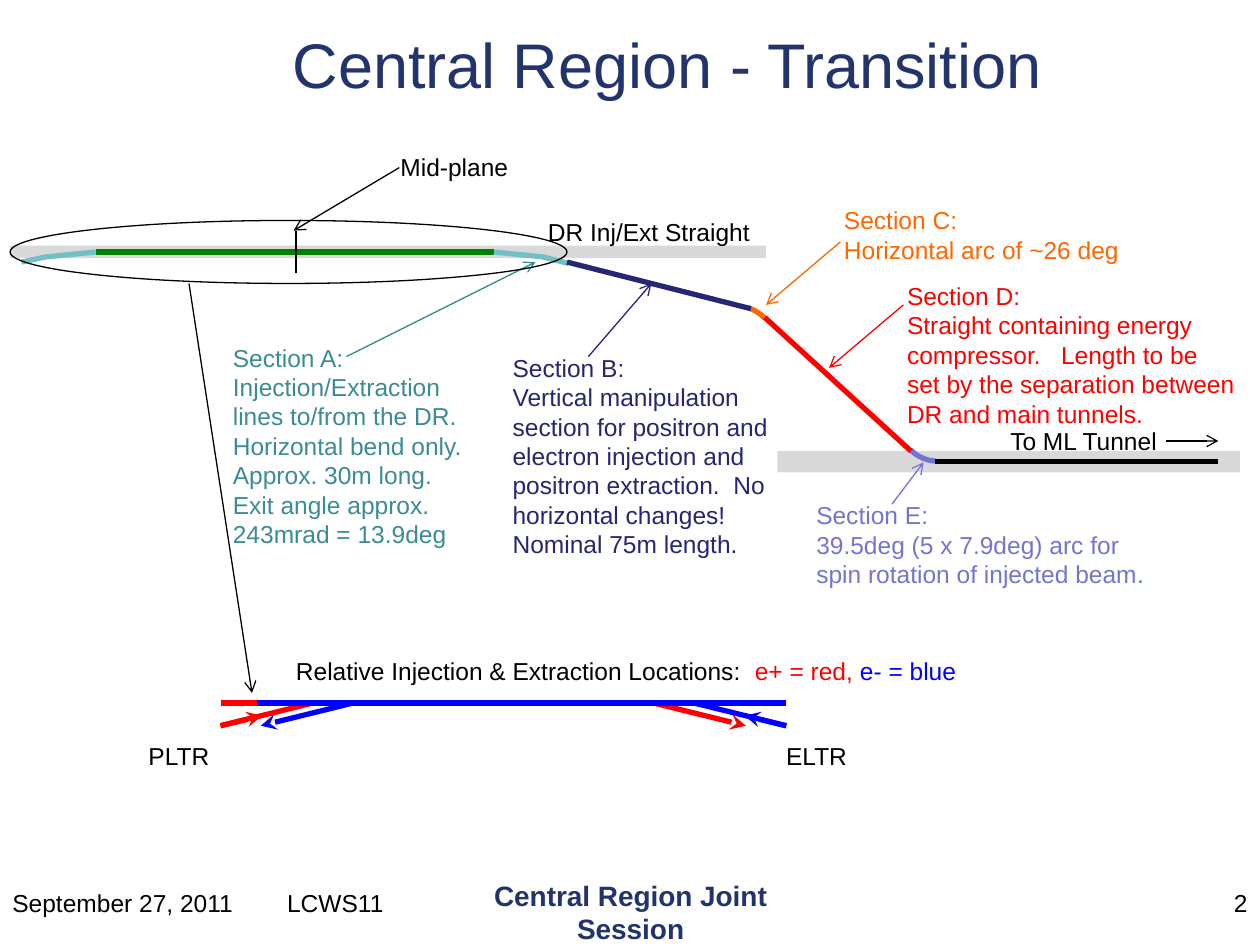
"""Build the Central Region transition slide."""
from dataclasses import dataclass

import pptx
import pptx.dml.color
import pptx.enum.shapes
import pptx.enum.text
import pptx.oxml
import pptx.oxml.ns
import pptx.util

PX = 9144
FONT = "Arial"
BLACK, GREY, NAVY = "000000", "D9D9D9", "23346C"
GREEN, AQUA, TEAL = "008000", "72BFC5", "3C8C93"
INDIGO, ORANGE, RED, LILAC, BLUE = "262673", "FF6600", "FF0000", "7575D1", "0000FF"
THIN, THICK = 0.75, 3
SHAPE = pptx.enum.shapes.MSO_SHAPE
ALIGN = pptx.enum.text.PP_ALIGN
ANCHOR = pptx.enum.text.MSO_ANCHOR


@dataclass(frozen=True)
class Line:
    start: tuple[int, int]
    end: tuple[int, int]
    color: str = BLACK
    width: float = THIN
    head: str = ""


@dataclass(frozen=True)
class Label:
    box: tuple[int, int, int, int]
    color: str
    lines: tuple[str, ...]


@dataclass(frozen=True)
class Arc:
    box: tuple[int, int, int, int]
    rotation: float
    start: float
    color: str


TUNNELS = [(617, 358, 367, 17), (8, 195, 600, 10)]
BEAMLINE = [
    Line((76, 200), (392, 200), GREEN, THICK),
    Line((392, 200), (432, 204), AQUA, THICK),
    Line((431, 204), (451, 209), AQUA, THICK),
    Line((76, 200), (36, 204), AQUA, THICK),
    Line((36, 204), (17, 208), AQUA, THICK),
    Line((235, 183), (235, 217)),
    Line((607, 252), (723, 358), RED, THICK),
    Line((450, 208), (596, 245), INDIGO, THICK),
    Line((742, 366), (967, 366), BLACK, THICK),
]
ARCS = [
    Arc((555, 243, 60, 60), 317, 197.84, ORANGE),
    Arc((714, 306, 60, 60), 135.7, 190.5, LILAC),
]
POINTERS = [
    Line((317, 133), (233, 183), head="arrow"),
    Line((275, 283), (425, 208), TEAL, head="arrow"),
    Line((467, 283), (517, 225), INDIGO, head="arrow"),
    Line((667, 192), (608, 242), ORANGE, head="arrow"),
    Line((717, 242), (658, 292), RED, head="arrow"),
    Line((708, 400), (733, 367), LILAC, head="arrow"),
    Line((925, 350), (967, 350), head="arrow"),
    Line((150, 225), (200, 550), head="arrow"),
]
POSITRONS = [
    Line((175, 558), (595, 558), RED, THICK),
    Line((175, 576), (248, 558), RED, THICK),
    Line((519, 558), (592, 576), RED, THICK, "stealth"),
    Line((175, 576), (208, 568), RED, THICK, "stealth"),
]
MIRROR = 799
LABELS = [
    Label((425, 167, 182, 34), BLACK, ("DR Inj/Ext Straight",)),
    Label((308, 116, 106, 34), BLACK, ("Mid-plane",)),
    Label((175, 267, 203, 175), TEAL, (
        "Section A:", "Injection/Extraction", "lines to/from the DR.",
        "Horizontal bend only.", "Approx. 30m long.", "Exit angle approx.",
        "243mrad = 13.9deg")),
    Label((397, 275, 226, 175), INDIGO, (
        "Section B:", "Vertical manipulation", "section for positron and",
        "electron injection and", "positron extraction.  No",
        "horizontal changes!", "Nominal 75m length.")),
    Label((660, 158, 240, 57), ORANGE, ("Section C:", "Horizontal arc of ~26 deg")),
    Label((710, 218, 282, 128), RED, (
        "Section D:", "Straight containing energy", "compressor.   Length to be",
        "set by the separation between", "DR and main tunnels.")),
    Label((792, 333, 137, 34), BLACK, ("To ML Tunnel",)),
    Label((108, 583, 69, 34), BLACK, ("PLTR",)),
    Label((614, 583, 69, 34), BLACK, ("ELTR",)),
]


def px(*values: int) -> list[pptx.util.Emu]:
    """Turn px into EMU."""
    return [pptx.util.Emu(v * PX) for v in values]


def rgb(color: str) -> pptx.dml.color.RGBColor:
    """Turn a hex string into a colour."""
    return pptx.dml.color.RGBColor.from_string(color)


def add_line(s, line: Line) -> None:
    """Draw a straight line with an optional arrowhead at its end."""
    sp = s.shapes.add_connector(pptx.enum.shapes.MSO_CONNECTOR.STRAIGHT,
                                *px(*line.start, *line.end))
    sp.line.color.rgb = rgb(line.color)
    sp.line.width = pptx.util.Pt(line.width)
    if line.head:
        tail = pptx.oxml.ns.qn("a:tailEnd")
        sp.line.fill
        ln = sp.line._get_or_add_ln()
        ln.append(ln.makeelement(tail, {"type": line.head}))
    props = sp._element.spPr
    props.append(props.makeelement(pptx.oxml.ns.qn("a:effectLst"), {}))


def add_shape(s, kind, box, *, fill: str = "", line: str = "", width: float = THIN):
    """Draw a preset shape with a plain fill or outline."""
    sp = s.shapes.add_shape(kind, *px(*box))
    sp.shadow.inherit = False
    if fill:
        sp.fill.solid()
        sp.fill.fore_color.rgb = rgb(fill)
    else:
        sp.fill.background()
    if line:
        sp.line.color.rgb = rgb(line)
        sp.line.width = pptx.util.Pt(width)
    else:
        sp.line.fill.background()
    return sp


def add_text(s, box, *lines, color: str = BLACK, size: int = 14, bold: bool = False,
             align=ALIGN.LEFT, anchor=ANCHOR.TOP, wrap: bool = False, tab: int = 0) -> None:
    """Write one paragraph per line; a line is a string or (text, colour) runs."""
    tf = s.shapes.add_textbox(*px(*box)).text_frame
    tf.word_wrap = wrap
    tf.vertical_anchor = anchor
    for i, line in enumerate(lines):
        p = tf.paragraphs[0] if i == 0 else tf.add_paragraph()
        p.alignment = align
        if tab:
            props = p._p.get_or_add_pPr()
            tabs = props.makeelement(pptx.oxml.ns.qn("a:tabLst"), {})
            tabs.append(tabs.makeelement(pptx.oxml.ns.qn("a:tab"),
                                         {"pos": str(tab * PX), "algn": "l"}))
            props.append(tabs)
        for text, run_color in [(line, color)] if isinstance(line, str) else line:
            r = p.add_run()
            r.text = text
            r.font.name = FONT
            r.font.size = pptx.util.Pt(size)
            r.font.bold = bold
            r.font.color.rgb = rgb(run_color)


def mirrored(line: Line) -> Line:
    """Return the electron line that mirrors a positron line."""
    (x1, y1), (x2, y2) = line.start, line.end
    return Line((MIRROR - x1, y1), (MIRROR - x2, y2), BLUE, line.width, line.head)


def main() -> None:
    """Build and save the slide."""
    prs = pptx.Presentation()
    prs.slide_width, prs.slide_height = px(1000, 750)
    s = prs.slides.add_slide(prs.slide_layouts[6])
    for box in TUNNELS:
        add_shape(s, SHAPE.RECTANGLE, box, fill=GREY)
    add_text(s, (142, 0, 775, 100), "Central Region - Transition", color=NAVY, size=36,
             align=ALIGN.CENTER, anchor=ANCHOR.MIDDLE, wrap=True)
    add_text(s, (0, 700, 350, 50), "September 27, 2011\tLCWS11", wrap=True, tab=218)
    add_text(s, (342, 692, 317, 50), "Central Region Joint Session", color=NAVY, size=16,
             bold=True, align=ALIGN.CENTER, wrap=True)
    add_text(s, (717, 700, 283, 50), "2", align=ALIGN.RIGHT, wrap=True)
    for arc in ARCS:
        sp = add_shape(s, SHAPE.ARC, arc.box, line=arc.color, width=THICK)
        sp.rotation = arc.rotation
        sp.adjustments[0] = arc.start
    for line in BEAMLINE + POINTERS + POSITRONS + [mirrored(p) for p in POSITRONS]:
        add_line(s, line)
    add_shape(s, SHAPE.OVAL, (8, 175, 442, 50), line=BLACK)
    for label in LABELS:
        add_text(s, label.box, *label.lines, color=label.color)
    add_text(s, (638, 392, 282, 81), "Section E:", "39.5deg (5 x 7.9deg) arc for",
             [("spin rotation of injected beam", LILAC), (".", TEAL)], color=LILAC)
    add_text(s, (225, 516, 548, 34), [("Relative Injection & Extraction Locations:  ", BLACK),
                                      ("e+ = red,", RED), (" e- = blue", BLUE)])
    prs.save("out.pptx")


if __name__ == "__main__":
    main()
